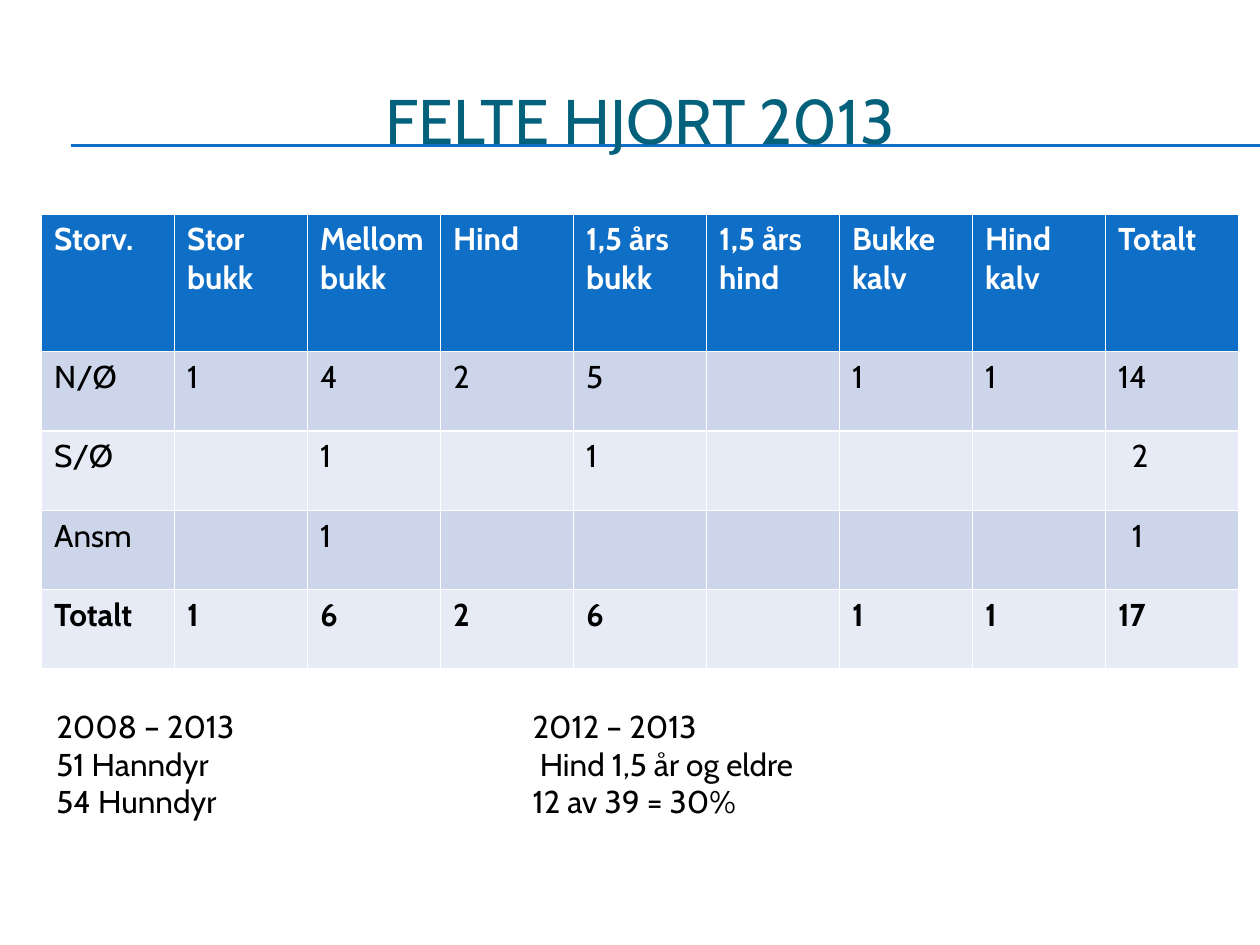
import pptx
import pptx.util
import pptx.dml.color
import pptx.enum.shapes
import pptx.enum.text
import pptx.oxml
import pptx.oxml.ns

Inches = pptx.util.Inches


def tint(code):
    return pptx.dml.color.RGBColor.from_string(code)


def put(frame, text, size=18, color="000000", bold=False, align=None):
    frame.text = text
    for para in frame.paragraphs:
        para.alignment = align
        for run in para.runs:
            run.font.name = "Cabin"
            run.font.size = pptx.util.Pt(size)
            run.font.bold = bold
            run.font.color.rgb = tint(color)


deck = pptx.Presentation()
deck.slide_width, deck.slide_height = Inches(10), Inches(7.5)
slide = deck.slides.add_slide(deck.slide_layouts[5])
shapes = slide.shapes

title = shapes.title
title.left, title.top = Inches(0.33), Inches(0.5)
title.width, title.height = Inches(9.5), Inches(0.89)
title.text_frame.vertical_anchor = pptx.enum.text.MSO_ANCHOR.MIDDLE
put(title.text_frame, "FELTE HJORT 2013", size=36, color="04617B",
    align=pptx.enum.text.PP_ALIGN.CENTER)

for y in (1.15, 1.16):
    rule = shapes.add_connector(pptx.enum.shapes.MSO_CONNECTOR.STRAIGHT,
                                Inches(0.56), Inches(y), Inches(10), Inches(y))
    rule.line.color.rgb = tint("0F6FC6")
    rule.line.width = pptx.util.Pt(0.75)
    props = rule.element.find(pptx.oxml.ns.qn("p:spPr"))
    props.append(pptx.oxml.parse_xml(
        f"<a:effectLst {pptx.oxml.ns.nsdecls('a')}/>"))
    title.element.addprevious(rule.element)

rows = [
    ["Storv.", "Stor\nbukk", "Mellom\nbukk", "Hind", "1,5 års\nbukk",
     "1,5 års\nhind", "Bukke\nkalv", "Hind\nkalv", "Totalt"],
    ["N/Ø", "1", "4", "2", "5", "", "1", "1", "14"],
    ["S/Ø", "", "1", "", "1", "", "", "", "2"],
    ["Ansm", "", "1", "", "", "", "", "", "1"],
    ["Totalt", "1", "6", "2", "6", "", "1", "1", "17"],
]
table = shapes.add_table(len(rows), len(rows[0]), Inches(0.33), Inches(1.7),
                         Inches(9.5), Inches(3.63)).table
last = len(rows) - 1
for r, row in enumerate(rows):
    table.rows[r].height = Inches(0.63 if r else 1.09)
    fill = ("E7EBF5", "CCD5EA")[r % 2] if r else "0F6FC6"
    for c, text in enumerate(row):
        cell = table.cell(r, c)
        cell.fill.solid()
        cell.fill.fore_color.rgb = tint(fill)
        put(cell.text_frame, text, color="000000" if r else "FFFFFF",
            bold=r in (0, last))
for r in (2, 3):
    table.cell(r, len(rows[0]) - 1).margin_left = Inches(0.21)

notes = [
    (0.35, 1.73, "2008 – 2013\n51 Hanndyr\n54 Hunndyr"),
    (4.13, 2.44, "2012 – 2013\n Hind 1,5 år og eldre\n12 av 39 = 30%"),
]
for x, width, text in notes:
    box = shapes.add_textbox(Inches(x), Inches(5.56), Inches(width), Inches(1.31))
    box.text_frame.word_wrap = True
    put(box.text_frame, text)

deck.save("out.pptx")
